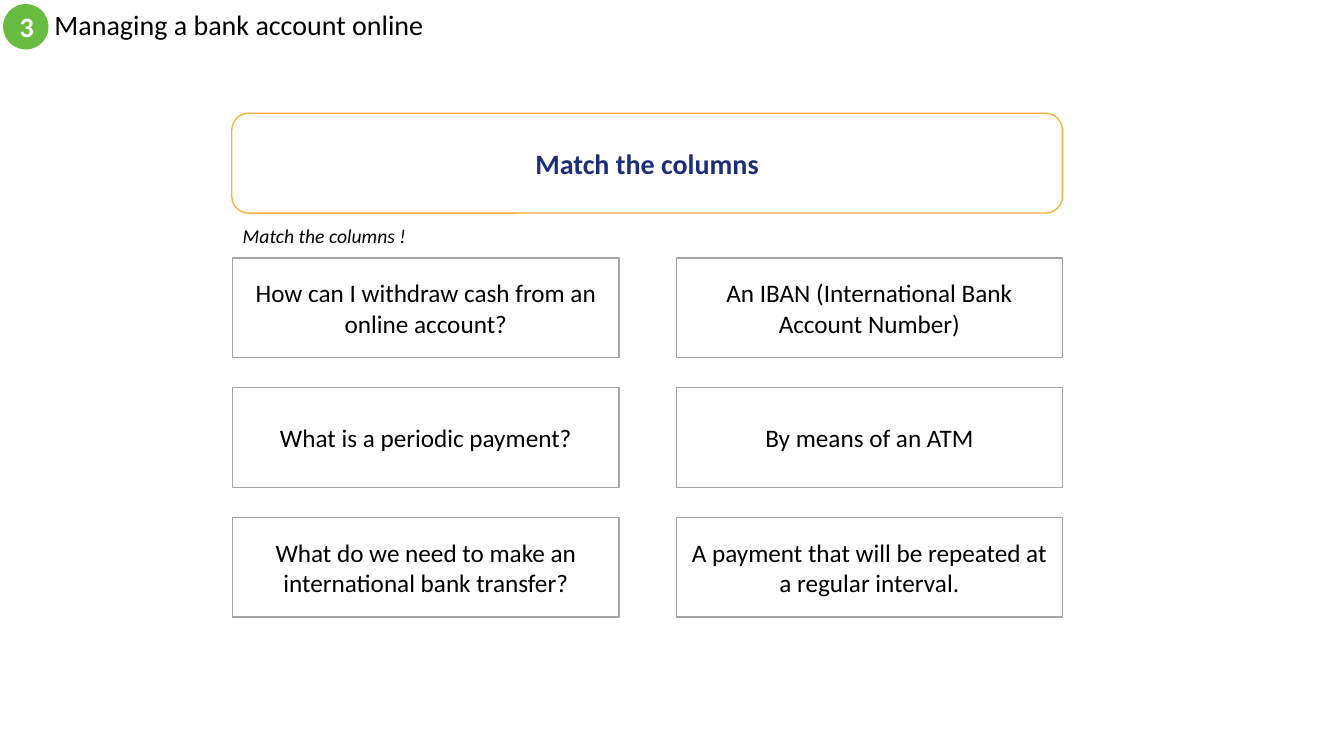
from pptx import Presentation
from pptx.dml.color import RGBColor
from pptx.enum.shapes import MSO_SHAPE as SHAPE
from pptx.enum.text import MSO_ANCHOR as ANCHOR, MSO_AUTO_SIZE as AUTO, PP_ALIGN as ALIGN
from pptx.util import Pt

PAIRS = [
    ("How can I withdraw cash from an online account?",
     "An IBAN (International Bank Account Number)"),
    ("What is a periodic payment?", "By means of an ATM"),
    ("What do we need to make an international bank transfer?",
     "A payment that will be repeated at a regular interval."),
]
LEFT, TOP = 166.3, 184.3
CARD_W, CARD_H = 275.8, 71.3
COL_STEP, ROW_STEP = 316.8, 92.6


def rgb(color):
    """Turn a hex string into a colour."""
    return RGBColor.from_string(color)


def place(sp, x, y, w, h):
    """Position a shape, in points."""
    sp.left, sp.top, sp.width, sp.height = Pt(x), Pt(y), Pt(w), Pt(h)


def write(sp, text, size, color="000000", align=ALIGN.LEFT, bold=False, italic=False):
    """Fill a shape with one formatted paragraph."""
    tf = sp.text_frame
    tf.text = text
    tf.word_wrap = True
    tf.vertical_anchor = ANCHOR.MIDDLE
    p = tf.paragraphs[0]
    p.alignment = align
    font = p.runs[0].font
    font.name, font.size = "Calibri", Pt(size)
    font.bold, font.italic = bold, italic
    font.color.rgb = rgb(color)


def add_title(s, text):
    """Format the title placeholder as the section heading."""
    sp = s.shapes.title
    place(sp, 31.7, 2.9, 576, 32.4)
    write(sp, text, 20)
    sp.text_frame.auto_size = AUTO.NONE
    sp.text_frame.paragraphs[0].line_spacing = 0.9


def add_box(s, kind, box, text, size, fill="FFFFFF", line=None, color="000000", bold=False):
    """Add a filled shape with centred text and an optional outline."""
    sp = s.shapes.add_shape(kind, *map(Pt, box))
    sp.shadow.inherit = False
    sp.fill.solid()
    sp.fill.fore_color.rgb = rgb(fill)
    if line:
        sp.line.color.rgb = rgb(line)
        sp.line.width = Pt(1)
    else:
        sp.line.fill.background()
    write(sp, text, size, color, ALIGN.CENTER, bold)


def add_instruction(s, text):
    """Add the italic instruction above the columns."""
    sp = s.shapes.add_textbox(Pt(LEFT), Pt(156.2), Pt(132.5), Pt(24.2))
    write(sp, text, 14, italic=True)
    tf = sp.text_frame
    tf.word_wrap = False
    tf.auto_size = AUTO.SHAPE_TO_FIT_TEXT
    tf.vertical_anchor = ANCHOR.TOP


def add_cards(s, pairs):
    """Lay out the questions and answers in two columns."""
    for row, pair in enumerate(pairs):
        for col, text in enumerate(pair):
            box = (LEFT + col * COL_STEP, TOP + row * ROW_STEP, CARD_W, CARD_H)
            add_box(s, SHAPE.RECTANGLE, box, text, 18, line="A5A5A5")


def main():
    """Build and save the slide."""
    prs = Presentation()
    prs.slide_width, prs.slide_height = Pt(960), Pt(540)
    s = prs.slides.add_slide(prs.slide_layouts[5])
    add_title(s, "Managing a bank account online")
    add_box(s, SHAPE.OVAL, (2.2, 2.9, 32.4, 32.4), "3", 20,
            fill="68BC42", color="FFFFFF", bold=True)
    add_box(s, SHAPE.ROUNDED_RECTANGLE, (165.6, 80.9, 593.3, 71.3), "Match the columns", 20,
            line="FCB13A", color="1C2E78", bold=True)
    add_instruction(s, "Match the columns !")
    add_cards(s, PAIRS)
    prs.save("out.pptx")


if __name__ == "__main__":
    main()
